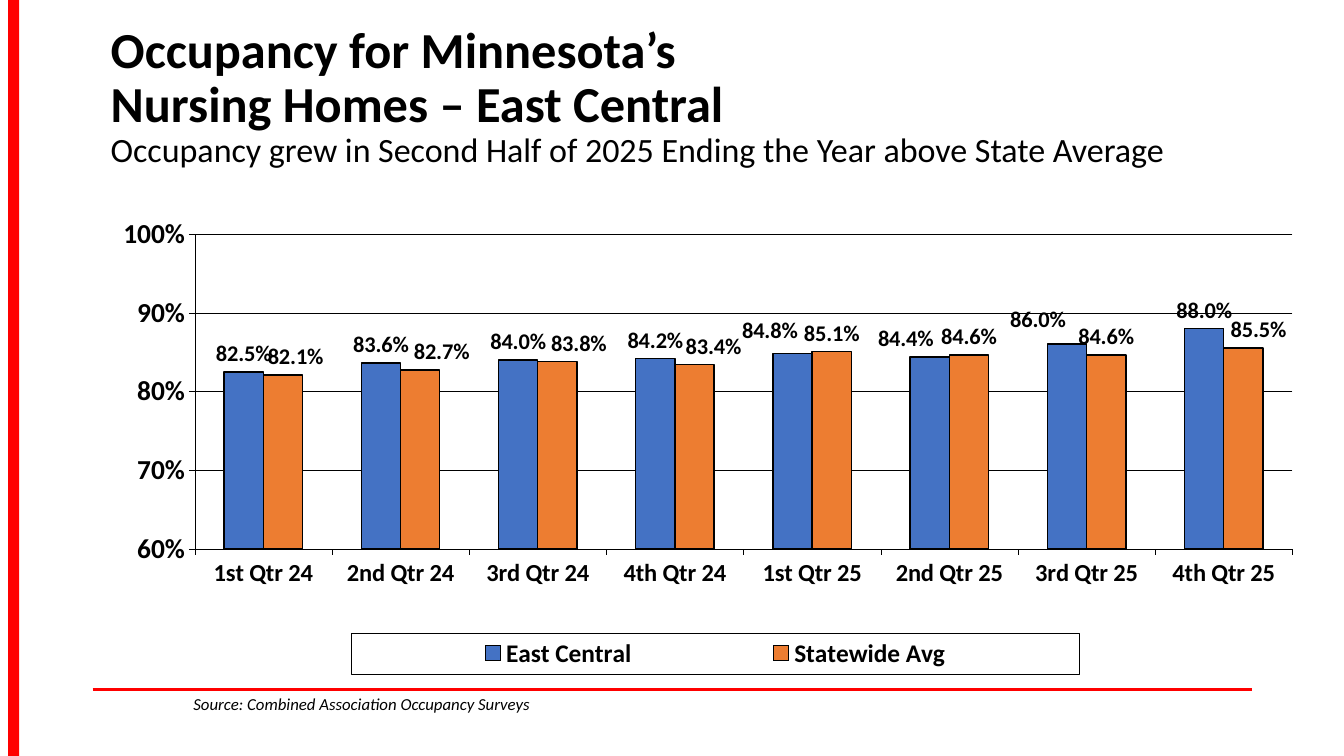
"""Build the East Central nursing home occupancy slide."""
from copy import deepcopy
from dataclasses import dataclass

from lxml.etree import SubElement
from pptx import Presentation
from pptx.chart.chart import Chart
from pptx.chart.data import CategoryChartData
from pptx.dml.color import RGBColor as RGB
from pptx.dml.line import LineFormat
from pptx.enum.chart import XL_CHART_TYPE as ChartType
from pptx.enum.chart import XL_LABEL_POSITION as LabelPos
from pptx.enum.chart import XL_LEGEND_POSITION as LegendPos
from pptx.enum.chart import XL_TICK_MARK as Tick
from pptx.enum.shapes import MSO_CONNECTOR as Connector
from pptx.enum.shapes import MSO_SHAPE as Preset
from pptx.enum.text import MSO_ANCHOR as Anchor
from pptx.oxml import parse_xml
from pptx.oxml.ns import nsdecls, qn
from pptx.slide import Slide
from pptx.text.text import Font
from pptx.util import Inches, Pt

COLORS = {"ink": "000000", "accent": "FF0000", "region": "4472C4", "state": "ED7D31"}
FONT = "Calibri"
HAIRLINE = 0.27
QUARTERS = [f"{quarter} Qtr {year}" for year in (24, 25)
            for quarter in ("1st", "2nd", "3rd", "4th")]


@dataclass(frozen=True)
class Occupancy:
    """One series, with label shifts as fractions of the chart size."""
    name: str
    color: str
    rates: tuple[float, ...]
    shifts: dict[int, tuple[float, float]]


@dataclass(frozen=True)
class TitleLine:
    """One line of the heading."""
    text: str
    size: float
    bold: bool


SERIES = [
    Occupancy("East Central", "region",
              (0.825, 0.836, 0.84, 0.842, 0.848, 0.844, 0.86, 0.88),
              {4: (-0.018, -0.01), 5: (-0.019, 0), 6: (-0.023, -0.014)}),
    Occupancy("Statewide Avg", "state",
              (0.821, 0.827, 0.838, 0.834, 0.851, 0.846, 0.846, 0.855),
              {0: (0.01, 0), 1: (0.017, 0), 2: (0.017, 0), 3: (0.015, 0), 7: (0.012, 0)}),
]
HEADING = [
    TitleLine("Occupancy for Minnesota’s", 36, True),
    TitleLine("Nursing Homes – East Central", 36, True),
    TitleLine("Occupancy grew in Second Half of 2025 Ending the Year above State Average",
              24.3, False),
]


def color(name: str) -> RGB:
    """Look up a named colour."""
    return RGB.from_string(COLORS[name])


def style_font(font: Font, size: float, bold: bool = False, italic: bool = False) -> None:
    """Apply the slide typeface in black."""
    font.name, font.size, font.bold, font.italic = FONT, Pt(size), bold, italic
    font.color.rgb = color("ink")


def style_line(line: LineFormat, width: float, name: str = "ink") -> None:
    """Set a solid line."""
    line.color.rgb = color(name)
    line.width = Pt(width)


def manual_layout(target: str = "", **places: float):
    """Make a chart layout element from fractions of the chart size."""
    inner = f'<c:layoutTarget val="{target}"/>' if target else ""
    inner += "".join(f'<c:{axis}Mode val="edge"/>' for axis in "xy") if "w" in places else ""
    inner += "".join(f'<c:{key} val="{value}"/>' for key, value in places.items())
    return parse_xml(f'<c:layout {nsdecls("c")}><c:manualLayout>{inner}'
                     '</c:manualLayout></c:layout>')


def add_frame(slide: Slide) -> None:
    """Draw the red side bar and the footer rule."""
    rule = slide.shapes.add_connector(Connector.STRAIGHT, Inches(0.92), Inches(6.84),
                                      Inches(12.42), Inches(6.84))
    style_line(rule.line, 2, "accent")
    SubElement(rule._element.spPr, qn("a:effectLst"))
    side_bar = slide.shapes.add_shape(Preset.RECTANGLE, Inches(0.08), 0,
                                      Inches(0.11), Inches(7.5))
    side_bar.shadow.inherit = False
    side_bar.fill.solid()
    side_bar.fill.fore_color.rgb = color("accent")
    side_bar.line.fill.background()


def add_heading(slide: Slide) -> None:
    """Write the title and its subtitle."""
    frame = slide.shapes.add_textbox(Inches(1), Inches(0.24),
                                     Inches(11.5), Inches(1.45)).text_frame
    frame.word_wrap = True
    frame.vertical_anchor = Anchor.MIDDLE
    paragraph = frame.paragraphs[0]
    paragraph.line_spacing = 0.9
    for index, line in enumerate(HEADING):
        if index:
            paragraph.add_line_break()
        run = paragraph.add_run()
        run.text = line.text
        style_font(run.font, line.size, line.bold)


def style_axes(chart: Chart) -> None:
    """Format both axes and the gridlines."""
    for axis, size in ((chart.category_axis, 17.5), (chart.value_axis, 19.6)):
        style_font(axis.tick_labels.font, size, bold=True)
        style_line(axis.format.line, HAIRLINE)
        axis.major_tick_mark = Tick.OUTSIDE
        axis.minor_tick_mark = Tick.NONE
    rates = chart.value_axis
    rates.minimum_scale, rates.maximum_scale, rates.major_unit = 0.6, 1, 0.1
    rates.tick_labels.number_format = "0%"
    rates.tick_labels.number_format_is_linked = False
    rates.has_major_gridlines = True
    style_line(rates.major_gridlines.format.line, HAIRLINE)


def style_series(chart: Chart) -> None:
    """Colour the columns and place their labels."""
    for columns, occupancy in zip(chart.plots[0].series, SERIES):
        columns.format.fill.solid()
        columns.format.fill.fore_color.rgb = color(occupancy.color)
        style_line(columns.format.line, 1.09)
        labels = columns.data_labels
        labels.show_value = True
        labels.number_format, labels.number_format_is_linked = "0.0%", False
        labels.position = LabelPos.OUTSIDE_END
        style_font(labels.font, 16, bold=True)
        shared = [part for part in labels._element if part.tag != qn("c:showLeaderLines")]
        for order, (point, (x, y)) in enumerate(occupancy.shifts.items()):
            label = parse_xml(f'<c:dLbl {nsdecls("c")}><c:idx val="{point}"/></c:dLbl>')
            label.append(manual_layout(x=x, y=y))
            label.extend(deepcopy(part) for part in shared)
            labels._element.insert(order, label)


def style_legend(chart: Chart) -> None:
    """Place the outlined legend below the plot."""
    chart.has_legend = True
    legend = chart.legend
    legend.position = LegendPos.BOTTOM
    legend.include_in_layout = False
    style_font(legend.font, 18.1, bold=True)
    root = legend._element
    for old in root.findall(qn("c:layout")):
        root.remove(old)
    root.find(qn("c:legendPos")).addnext(manual_layout(x=0.255, y=0.909, w=0.576, h=0.084))
    root.find(qn("c:txPr")).addprevious(parse_xml(
        f'<c:spPr {nsdecls("c", "a")}><a:ln w="{Pt(HAIRLINE)}"><a:solidFill>'
        f'<a:srgbClr val="{COLORS["ink"]}"/></a:solidFill></a:ln></c:spPr>'))


def add_occupancy_chart(slide: Slide) -> None:
    """Add the clustered column chart."""
    data = CategoryChartData(number_format="0.0%")
    data.categories = QUARTERS
    for occupancy in SERIES:
        data.add_series(occupancy.name, occupancy.rates)
    chart = slide.shapes.add_chart(ChartType.COLUMN_CLUSTERED, Inches(0.29), Inches(1.86),
                                   Inches(12.53), Inches(4.86), data).chart
    style_font(chart.font, 19.6, bold=True)
    chart.font.name = "Times New Roman"
    chart.has_title = False
    plot = chart.plots[0]
    plot.gap_width, plot.overlap, plot.vary_by_categories = 150, 0, False
    style_axes(chart)
    style_series(chart)
    style_legend(chart)
    area = chart.element.find(".//" + qn("c:plotArea"))
    for old in area.findall(qn("c:layout")):
        area.remove(old)
    area.insert(0, manual_layout("inner", x=0.131, y=0.095, w=0.869, h=0.643))


def add_source(slide: Slide) -> None:
    """Write the source line."""
    frame = slide.shapes.add_textbox(Inches(1.82), Inches(6.83),
                                     Inches(5.27), Inches(0.5)).text_frame
    frame.word_wrap = True
    frame.text = "Source: Combined Association Occupancy Surveys"
    style_font(frame.paragraphs[0].font, 12, italic=True)


def main() -> None:
    """Assemble and save the slide."""
    deck = Presentation()
    deck.slide_width, deck.slide_height = Inches(13.33), Inches(7.5)
    slide = deck.slides.add_slide(deck.slide_layouts[6])
    for add_part in (add_frame, add_heading, add_occupancy_chart, add_source):
        add_part(slide)
    deck.save("out.pptx")


if __name__ == "__main__":
    main()
